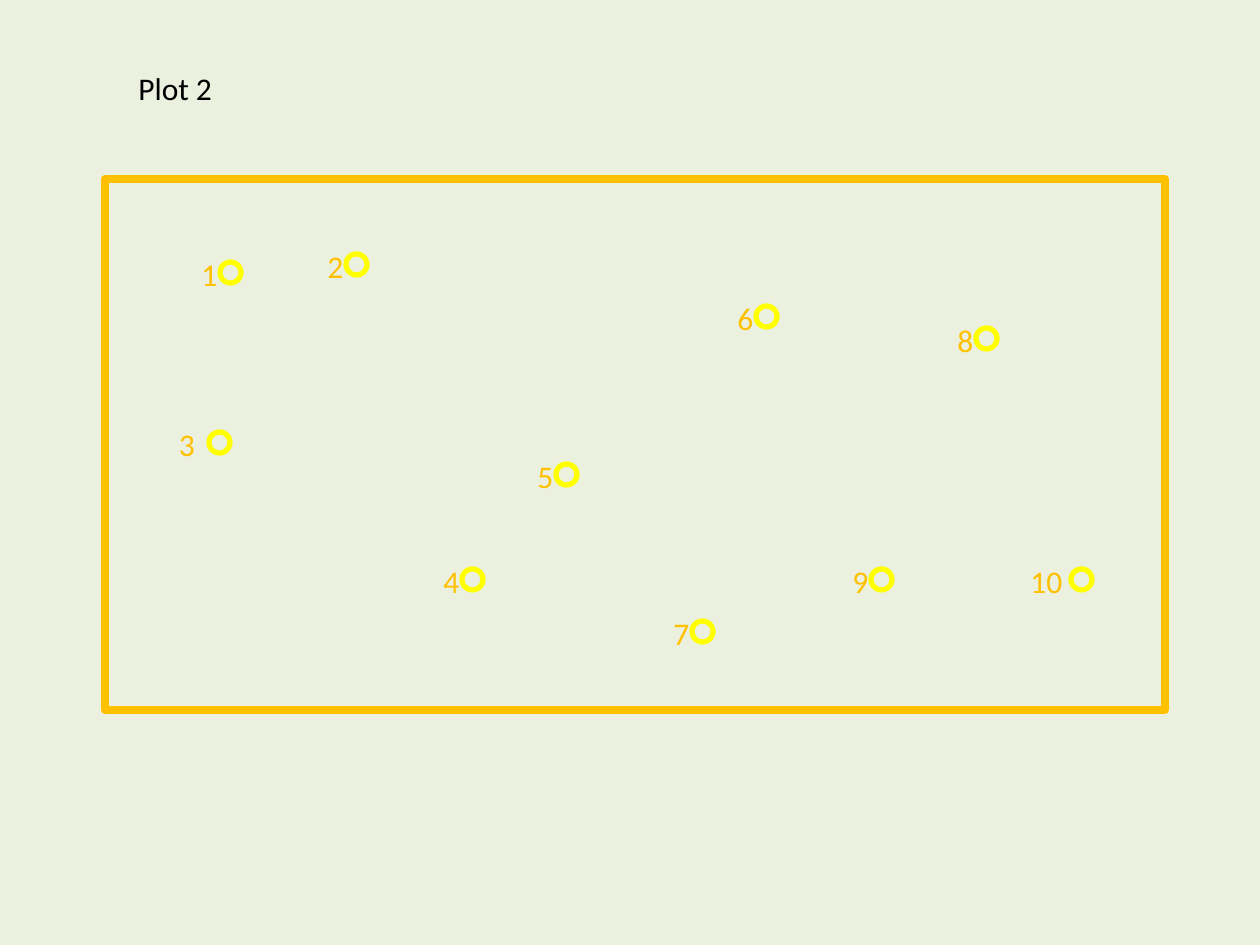
from pptx import Presentation
from pptx.dml.color import RGBColor
from pptx.enum.shapes import MSO_SHAPE
from pptx.enum.text import MSO_AUTO_SIZE
from pptx.util import Pt

PX = 914400 / 126  # EMU per px
RECTANGLE, OVAL = MSO_SHAPE.RECTANGLE, MSO_SHAPE.OVAL
FIT_SHAPE = MSO_AUTO_SIZE.SHAPE_TO_FIT_TEXT
PALE_GREEN = RGBColor(0xEB, 0xF1, 0xDE)
ORANGE = RGBColor(0xFF, 0xC0, 0x00)
YELLOW = RGBColor(0xFF, 0xFF, 0x00)
BLACK = RGBColor(0x00, 0x00, 0x00)
RING, LABEL_HEIGHT, LABEL_RISE = 21, 50, 13


def add_outline(shapes, preset, box, color, weight):
    outline = shapes.add_shape(preset, *(round(v * PX) for v in box))
    outline.shadow.inherit = False
    outline.fill.background()
    outline.line.color.rgb = color
    outline.line.width = Pt(weight)


def add_label(shapes, text, box, color, wrap=False):
    label = shapes.add_textbox(*(round(v * PX) for v in box))
    frame = label.text_frame
    frame.word_wrap = wrap
    frame.auto_size = FIT_SHAPE
    run = frame.paragraphs[0].add_run()
    run.text = text
    run.font.name = "Calibri"
    run.font.size = Pt(18)
    run.font.color.rgb = color


prs = Presentation()
prs.slide_width, prs.slide_height = round(1260 * PX), round(945 * PX)
slide = prs.slides.add_slide(prs.slide_layouts[6])
slide.background.fill.solid()
slide.background.fill.fore_color.rgb = PALE_GREEN

# Plot border
add_outline(slide.shapes, RECTANGLE, (105, 179, 1060, 531), ORANGE, 4.5)

# Numbered sampling points: left and top of each ring
points = [
    (220, 262), (346, 254), (209, 432), (462, 569), (556, 464),
    (756, 306), (692, 621), (976, 328), (871, 569), (1071, 569),
]
# Label offset to the left of the ring, and label width
default_label = (31, 42)
special_labels = {3: (30, 6), 10: (53, 66)}

for number, (left, top) in enumerate(points, start=1):
    offset, width = special_labels.get(number, default_label)
    point = slide.shapes.add_group_shape().shapes
    add_outline(point, OVAL, (left, top, RING, RING), YELLOW, 3)
    label_box = (left - offset, top - LABEL_RISE, width, LABEL_HEIGHT)
    add_label(point, str(number), label_box, ORANGE, wrap=number == 3)

# Title
add_label(slide.shapes, "Plot 2", (126, 63, 100, LABEL_HEIGHT), BLACK)

prs.save("out.pptx")
